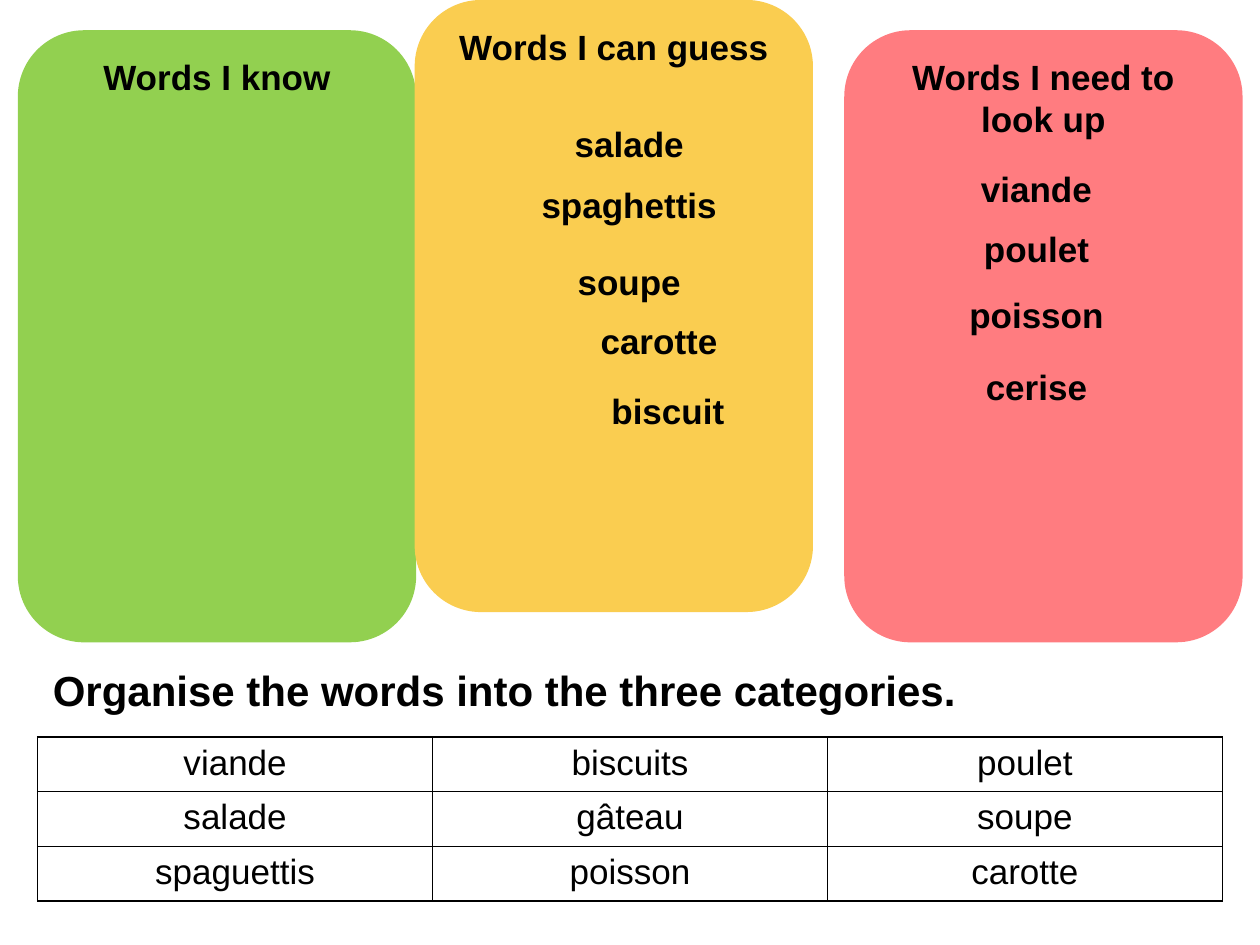
import pptx
import pptx.util
import pptx.dml.color
import pptx.enum.shapes
import pptx.enum.text
import pptx.oxml
import pptx.oxml.ns
from pptx.util import Cm, Pt

COLOURS = {"green": "92D050", "amber": "FACD50", "red": "FF7C80", "black": "000000"}
CENTER = pptx.enum.text.PP_ALIGN.CENTER
LEFT = pptx.enum.text.PP_ALIGN.LEFT
TOP = pptx.enum.text.MSO_ANCHOR.TOP

# Content; lengths in centimetres
INSTRUCTION = "Organise the words into the three categories."
CARD_WIDTH, CARD_HEIGHT = 8.03, 12.34
CARDS = [  # heading, colour, left, top
    ("Words I know", "green", 0.36, 0.61),
    ("Words I can guess", "amber", 8.36, 0),
    ("Words I need to look up", "red", 17.02, 0.61),
]
WORD_HEIGHT = 1.12
SORTED_WORDS = [  # word, left, top, width
    ("salade", 9.7, 2.34, 5.97),
    ("spaghettis", 9.7, 3.58, 5.97),
    ("soupe", 9.7, 5.13, 5.97),
    ("carotte", 10.44, 6.32, 5.69),
    ("biscuit", 10.06, 7.72, 6.81),
    ("viande", 17.91, 3.25, 5.97),
    ("poulet", 17.91, 4.47, 5.97),
    ("poisson", 17.91, 5.79, 5.97),
    ("cerise", 17.91, 7.24, 5.97),
]
WORD_BANK = [
    ["viande", "biscuits", "poulet"],
    ["salade", "gâteau", "soupe"],
    ["spaguettis", "poisson", "carotte"],
]
BANK_LEFT, BANK_TOP, BANK_WIDTH, ROW_HEIGHT = 0.76, 14.86, 23.88, 1.1


def rgb(name):
    return pptx.dml.color.RGBColor.from_string(COLOURS[name])


def write(frame, text, size=20, bold=True, align=CENTER):
    frame.word_wrap = True
    frame.vertical_anchor = TOP
    para = frame.paragraphs[0]
    para.text = text
    para.alignment = align
    font = para.font
    font.name, font.size, font.bold = "Arial", Pt(size), bold
    font.color.rgb = rgb("black")


def add_borders(cell):
    properties = cell._tc.get_or_add_tcPr()
    for position, side in enumerate(("lnL", "lnR", "lnT", "lnB")):
        border = pptx.oxml.parse_xml(
            f'<a:{side} {pptx.oxml.ns.nsdecls("a")} w="{Pt(1)}"><a:solidFill>'
            f'<a:srgbClr val="{COLOURS["black"]}"/></a:solidFill></a:{side}>')
        properties.insert(position, border)


deck = pptx.Presentation()
deck.slide_width, deck.slide_height = Cm(25.4), Cm(19.05)
page = deck.slides.add_slide(deck.slide_layouts[5])

# Category cards
for heading, colour, left, top in CARDS:
    card = page.shapes.add_shape(
        pptx.enum.shapes.MSO_SHAPE.ROUNDED_RECTANGLE,
        Cm(left), Cm(top), Cm(CARD_WIDTH), Cm(CARD_HEIGHT))
    card.shadow.inherit = False
    card.fill.solid()
    card.fill.fore_color.rgb = rgb(colour)
    card.line.fill.background()
    write(card.text_frame, heading)

# Word bank
table = page.shapes.add_table(
    len(WORD_BANK), len(WORD_BANK[0]), Cm(BANK_LEFT), Cm(BANK_TOP),
    Cm(BANK_WIDTH), Cm(ROW_HEIGHT * len(WORD_BANK))).table
table.first_row = table.horz_banding = False
for row, words in enumerate(WORD_BANK):
    for column, word in enumerate(words):
        cell = table.cell(row, column)
        cell.fill.background()
        add_borders(cell)
        write(cell.text_frame, word, bold=False)

# Instruction
title = page.shapes.title
title.left, title.top, title.width, title.height = Cm(0.81), Cm(13.26), Cm(24.23), Cm(1.3)
title.text_frame.auto_size = pptx.enum.text.MSO_AUTO_SIZE.NONE
write(title.text_frame, INSTRUCTION, size=24, align=LEFT)

# Words placed on the cards
for word, left, top, width in SORTED_WORDS:
    box = page.shapes.add_textbox(Cm(left), Cm(top), Cm(width), Cm(WORD_HEIGHT))
    write(box.text_frame, word)

deck.save("out.pptx")
